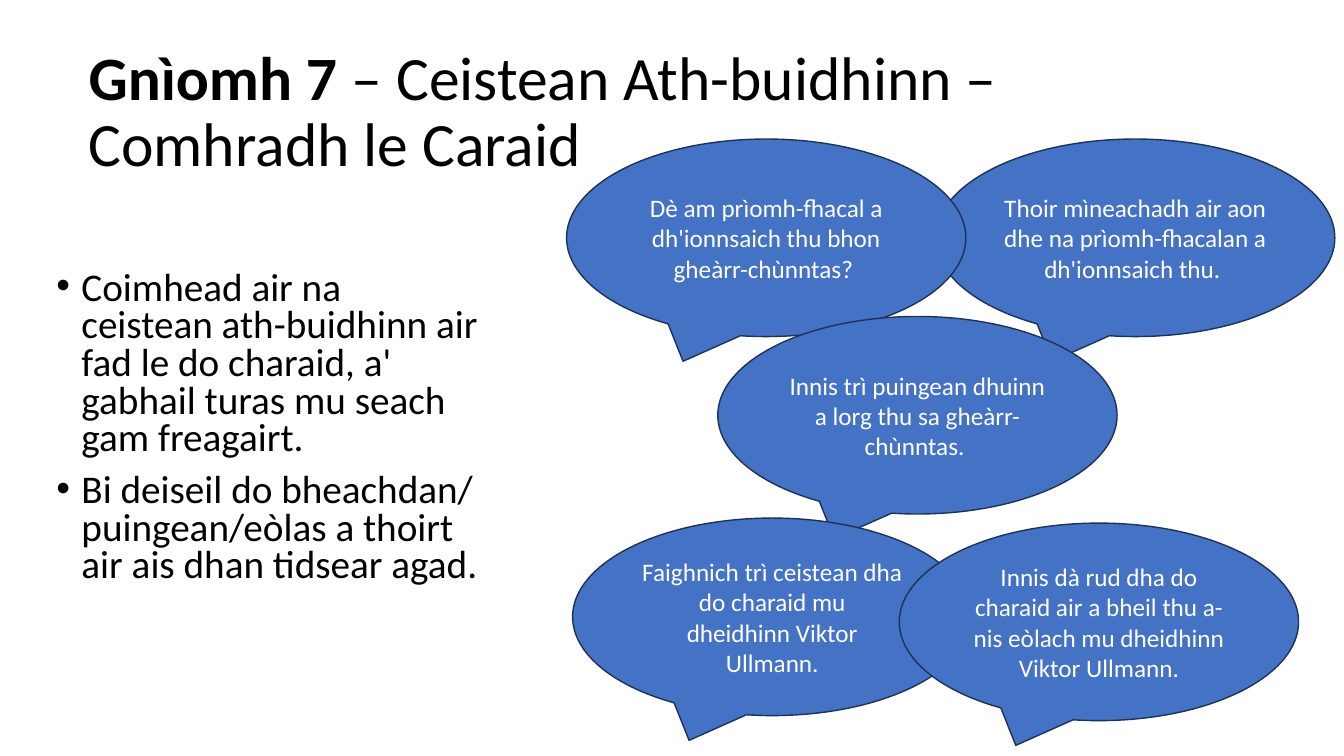
from lxml import etree
from pptx import Presentation
from pptx.dml.color import RGBColor
from pptx.enum.shapes import MSO_SHAPE
from pptx.enum.text import MSO_ANCHOR, PP_ALIGN
from pptx.oxml.ns import qn
from pptx.util import Inches, Pt

CALLOUT = MSO_SHAPE.OVAL_CALLOUT
MIDDLE, TOP = MSO_ANCHOR.MIDDLE, MSO_ANCHOR.TOP
CENTER = PP_ALIGN.CENTER
FONT = "Calibri"
NBSP = chr(160)
COLORS = {"text": "000000", "bubble": "4472C4", "outline": "1E3256", "bubble_text": "FFFFFF"}
BUBBLE_W, BUBBLE_H = 3.96, 1.96


def add_run(p, text, size, color, bold=False):
    r = p.add_run()
    r.text = text
    r.font.name = FONT
    r.font.size = Pt(size)
    r.font.bold = bold
    r.font.color.rgb = RGBColor.from_string(COLORS[color])


def add_text_frame(s, left, top, width, height, anchor):
    tf = s.shapes.add_textbox(Inches(left), Inches(top), Inches(width), Inches(height)).text_frame
    tf.word_wrap = True
    tf.vertical_anchor = anchor
    return tf


prs = Presentation()
prs.slide_width, prs.slide_height = Inches(13.33), Inches(7.5)
s = prs.slides.add_slide(prs.slide_layouts[6])

tf = add_text_frame(s, 0.78, 0.4, 11.5, 1.45, MIDDLE)
p = tf.paragraphs[0]
p.line_spacing = 0.9
add_run(p, "Gnìomh 7 ", 44, "text", True)
add_run(p, "– Ceistean Ath-buidhinn – Comhradh le Caraid", 44, "text")

instructions = [
    "Coimhead air na ceistean ath-buidhinn air fad le do charaid, a' gabhail turas mu seach gam freagairt.",
    "Bi deiseil do bheachdan/ puingean/eòlas a thoirt air ais dhan tidsear agad.",
]
tf = add_text_frame(s, 0.46, 2.64, 4.38, 3.84, TOP)
for i, text in enumerate(instructions):
    p = tf.add_paragraph() if i else tf.paragraphs[0]
    p.line_spacing = 0.8
    p.space_before = Pt(10)
    add_run(p, text, 28, "text")
    pPr = p._p.get_or_add_pPr()
    pPr.set("marL", str(Inches(0.25)))
    pPr.set("indent", str(-Inches(0.25)))
    etree.SubElement(pPr, qn("a:buFont")).set("typeface", "Arial")
    etree.SubElement(pPr, qn("a:buChar")).set("char", "•")

bubbles = [
    (9.28, 1.38, f"Thoir mìneachadh air aon dhe na prìomh-fhacalan a dh'ionnsaich thu.{NBSP}"),
    (5.62, 1.38, f"Dè am prìomh-fhacal a dh'ionnsaich thu bhon gheàrr-chùnntas?{NBSP}"),
    (7.12, 3.14, f"Innis trì puingean dhuinn a lorg thu sa gheàrr-chùnntas.{NBSP}"),
    (5.68, 5.14, f"Faighnich trì ceistean dha do charaid mu dheidhinn{NBSP}Viktor Ullmann."),
    (8.92, 5.19, "Innis dà rud dha do charaid air a bheil thu a-nis eòlach mu dheidhinn Viktor Ullmann."),
]
for left, top, text in bubbles:
    sp = s.shapes.add_shape(CALLOUT, Inches(left), Inches(top), Inches(BUBBLE_W), Inches(BUBBLE_H))
    sp.shadow.inherit = False
    sp.fill.solid()
    sp.fill.fore_color.rgb = RGBColor.from_string(COLORS["bubble"])
    sp.line.color.rgb = RGBColor.from_string(COLORS["outline"])
    sp.line.width = Pt(1)
    tf = sp.text_frame
    tf.word_wrap = True
    tf.vertical_anchor = MIDDLE
    p = tf.paragraphs[0]
    p.alignment = CENTER
    add_run(p, text, 18, "bubble_text")

prs.save("out.pptx")
